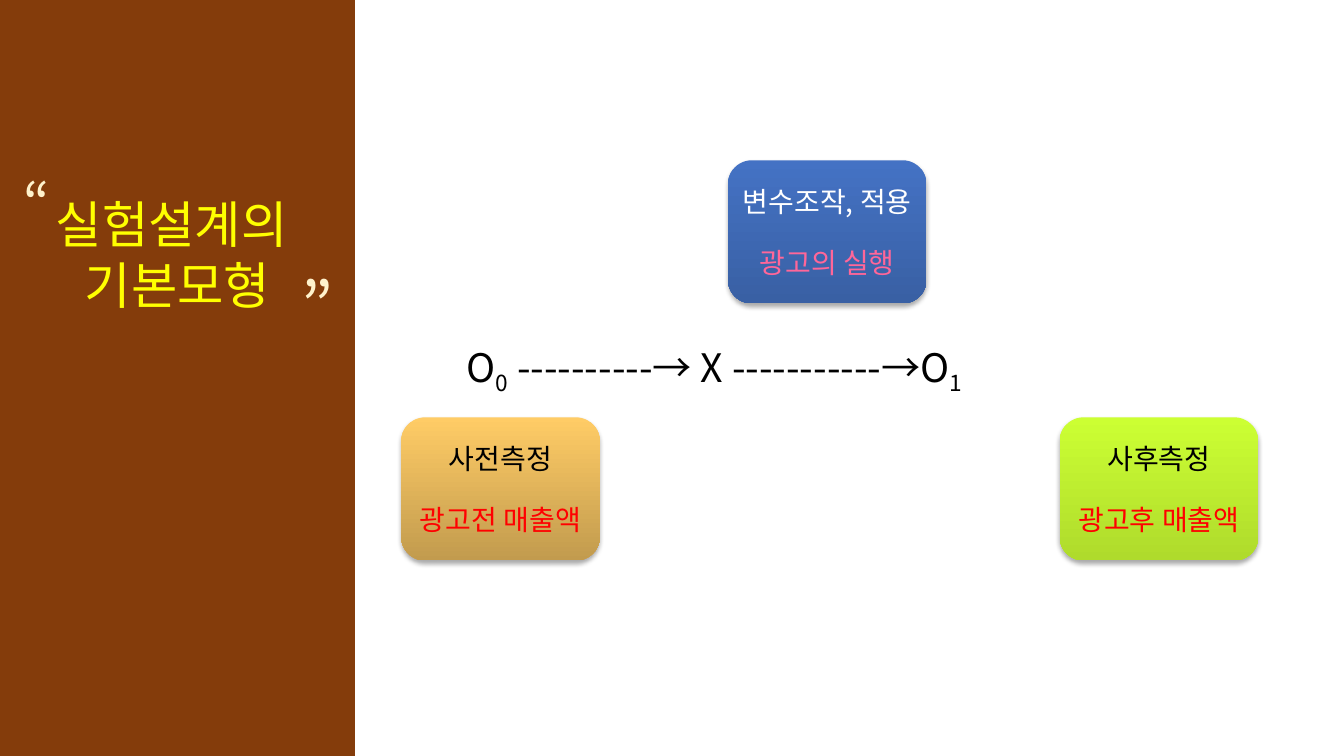
from dataclasses import dataclass

from lxml.etree import SubElement
from pptx import Presentation
from pptx.dml.color import RGBColor
from pptx.enum.shapes import MSO_SHAPE
from pptx.enum.text import MSO_ANCHOR, MSO_AUTO_SIZE, PP_ALIGN
from pptx.oxml.ns import qn
from pptx.util import Inches, Pt


@dataclass(frozen=True)
class Theme:
    panel: str = "843C0B"
    title: str = "FFFF00"
    quote: str = "FFF2CC"
    ink: str = "000000"
    light: str = "FFFFFF"
    red: str = "FF0000"
    pink: str = "FF6699"
    orange: tuple = ("FFCC66", "C29B4E")
    lime: tuple = ("CCFF33", "AFDB2C")
    blue: tuple = ("4472C4", "3960A4")
    title_font: str = "Calibri"
    body_font: str = "Noto Sans CJK KR"
    title_size: int = 36
    formula_size: int = 28
    card_size: int = 20
    open_size: int = 40
    close_size: int = 48


theme = Theme()


def style(para, size, color, font=theme.body_font):
    for span in para.runs:
        span.font.size = Pt(size)
        span.font.name = font
        span.font.color.rgb = RGBColor.from_string(color)
        east_asian = SubElement(span.font._element, qn("a:ea"))
        east_asian.set("typeface", font)


def add_shadow(shape):
    shape.shadow.inherit = False
    effects = shape._element.spPr.find(qn("a:effectLst"))
    shadow = SubElement(effects, qn("a:outerShdw"), blurRad=str(Pt(3.5)),
                        dist=str(Pt(2.2)), dir="5400000", rotWithShape="0")
    color = SubElement(shadow, qn("a:srgbClr"), val="000000")
    SubElement(color, qn("a:alpha"), val="32000")


deck = Presentation()
deck.slide_width, deck.slide_height = Inches(13.33), Inches(7.5)
page = deck.slides.add_slide(deck.slide_layouts[6])

# Title panel
panel = page.shapes.add_shape(MSO_SHAPE.RECTANGLE, 0, 0, Inches(3.52), Inches(7.5))
panel.shadow.inherit = False
panel.fill.solid()
panel.fill.fore_color.rgb = RGBColor.from_string(theme.panel)
panel.line.fill.background()
frame = panel.text_frame
frame.text = "실험설계의 \v기본모형"
frame.vertical_anchor = MSO_ANCHOR.TOP
frame.margin_top = Inches(1.92)
frame.paragraphs[0].alignment = PP_ALIGN.CENTER
style(frame.paragraphs[0], theme.title_size, theme.title, theme.title_font)

# Experiment formula, with lowered indices
formula = page.shapes.add_textbox(Inches(4.53), Inches(3.36), Inches(8.28), Inches(1.34))
formula.text_frame.word_wrap = True
para = formula.text_frame.paragraphs[0]
para.line_spacing = 0.9
para.space_before = Pt(10)
for text, baseline in (("O", 0), ("0", -25000),
                       (" ----------→ X -----------→O", 0), ("1", -25000)):
    span = para.add_run()
    span.text = text
    if baseline:
        span.font._element.set("baseline", str(baseline))
style(para, theme.formula_size, theme.ink)

# Stage cards
cards = (
    (3.98, 4.14, theme.orange, ("사전측정", theme.ink), ("광고전 매출액", theme.red)),
    (10.51, 4.14, theme.lime, ("사후측정", theme.ink), ("광고후 매출액", theme.red)),
    (7.22, 1.59, theme.blue, ("변수조작, 적용", theme.light), ("광고의 실행", theme.pink)),
)
for left, top, gradient, *lines in cards:
    card = page.shapes.add_shape(MSO_SHAPE.ROUNDED_RECTANGLE, Inches(left), Inches(top),
                                 Inches(1.97), Inches(1.42))
    card.fill.gradient()
    card.fill.gradient_angle = 270
    for stop, position, color in zip(card.fill.gradient_stops, (0, 1), gradient):
        stop.position = position
        stop.color.rgb = RGBColor.from_string(color)
    card.line.fill.background()
    add_shadow(card)
    frame = card.text_frame
    frame.text = "\n".join(text for text, color in lines)
    frame.word_wrap = False
    frame.vertical_anchor = MSO_ANCHOR.MIDDLE
    for para, (text, color) in zip(frame.paragraphs, lines):
        para.alignment = PP_ALIGN.CENTER
        style(para, theme.card_size, color)
    frame.paragraphs[1].space_before = Pt(19)

# Quotation marks around the title
for mark, left, top, width, height, size in (
        ("“", 0.13, 1.62, 0.49, 0.77, theme.open_size),
        ("”", 2.89, 2.57, 0.55, 0.91, theme.close_size)):
    box = page.shapes.add_textbox(Inches(left), Inches(top), Inches(width), Inches(height))
    box.text_frame.text = mark
    box.text_frame.word_wrap = False
    box.text_frame.auto_size = MSO_AUTO_SIZE.SHAPE_TO_FIT_TEXT
    style(box.text_frame.paragraphs[0], size, theme.quote)

deck.save("out.pptx")
